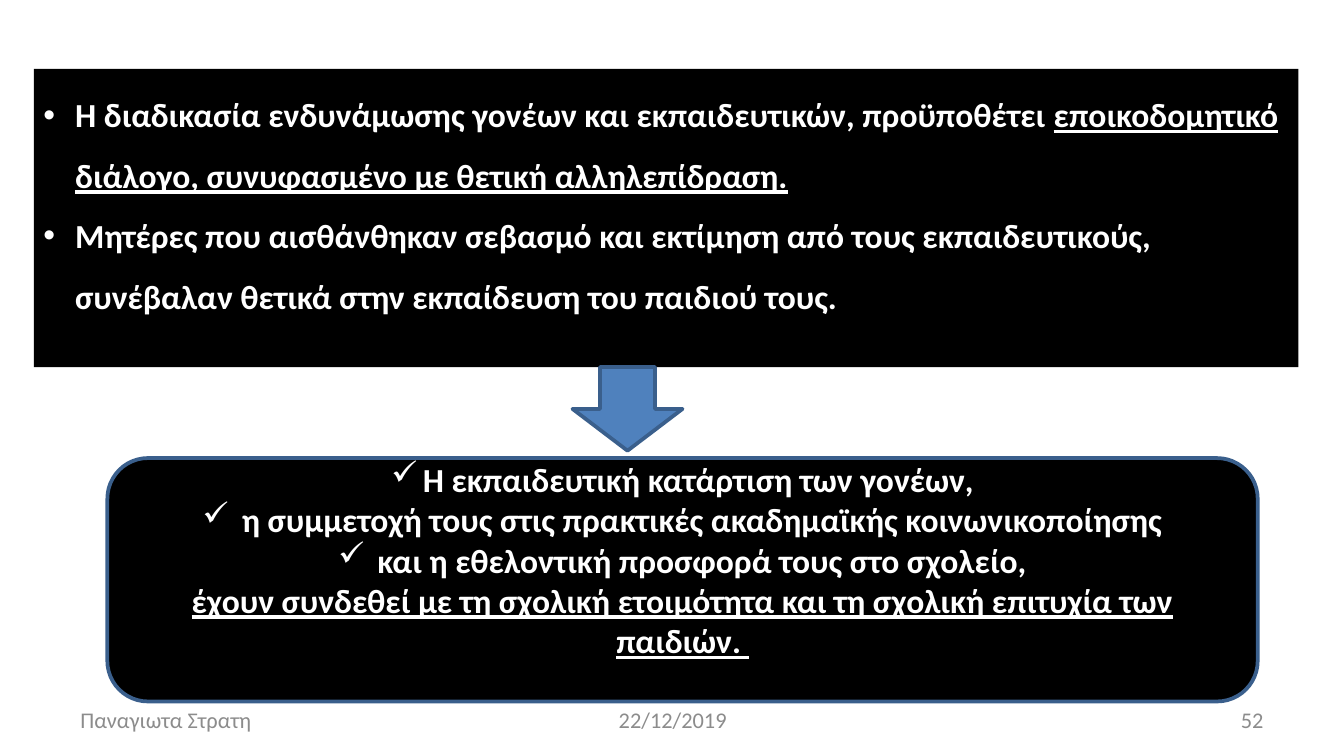
from lxml.etree import SubElement
from pptx import Presentation
from pptx.dml.color import RGBColor
from pptx.enum.shapes import MSO_SHAPE as Kind
from pptx.enum.text import MSO_ANCHOR as Anchor, MSO_AUTO_SIZE as Fit, PP_ALIGN as Align
from pptx.oxml.ns import qn
from pptx.util import Cm, Pt

BLACK = RGBColor(0, 0, 0)
WHITE = RGBColor(255, 255, 255)
GRAY = RGBColor(0x8C, 0x8C, 0x8C)
BLUE = RGBColor(0x4F, 0x81, 0xBD)
EDGE = RGBColor(0x3A, 0x5F, 0x8C)

POINTS = [
    ("•", [("Η διαδικασία ενδυνάμωσης γονέων και εκπαιδευτικών, προϋποθέτει ", False),
           ("εποικοδομητικό διάλογο, συνυφασμένο με θετική αλληλεπίδραση.", True)]),
    ("•", [("Μητέρες που αισθάνθηκαν σεβασμό και εκτίμηση από τους εκπαιδευτικούς, "
            "συνέβαλαν θετικά στην εκπαίδευση του παιδιού τους.", False)]),
]
RESULTS = [
    ("✓", [("Η εκπαιδευτική κατάρτιση των γονέων,", False)]),
    ("✓", [(" η συμμετοχή τους στις πρακτικές ακαδημαϊκής κοινωνικοποίησης", False)]),
    ("✓", [(" και η εθελοντική προσφορά τους στο σχολείο,", False)]),
    (None, [("έχουν συνδεθεί με τη σχολική ετοιμότητα και τη σχολική επιτυχία των παιδιών. ", True)]),
]
FOOTER = [
    ("Παναγιωτα Στρατη", 1.27, 5.92, Align.LEFT),
    ("22/12/2019", 8.69, 8.05, Align.CENTER),
    ("52", 18.21, 5.92, Align.RIGHT),
]


def write(frame, items, size=18, color=WHITE, bold=True, align=Align.LEFT,
          space=1, anchor=Anchor.MIDDLE, sides=0.18, top=0.1, foot=0.1):
    frame.word_wrap = True
    frame.auto_size = Fit.NONE
    frame.vertical_anchor = anchor
    frame.margin_left = frame.margin_right = Cm(sides)
    frame.margin_top, frame.margin_bottom = Cm(top), Cm(foot)
    for i, (mark, parts) in enumerate(items):
        para = frame.add_paragraph() if i else frame.paragraphs[0]
        if mark:
            props = para._p.get_or_add_pPr()
            props.set("marL", str(Cm(0.6)))
            props.set("indent", str(Cm(-0.6)))
            SubElement(props, qn("a:buChar")).set("char", mark)
        para.alignment = align
        para.line_spacing = space
        para.space_before = Pt(0)
        for text, under in parts:
            run = para.add_run()
            run.text = text
            font = run.font
            font.name, font.size, font.bold = "Calibri", Pt(size), bold
            font.underline = under
            font.color.rgb = color


def draw(slide, kind, box, fill):
    shape = slide.shapes.add_shape(kind, *map(Cm, box))
    shape.shadow.inherit = False
    shape.fill.solid()
    shape.fill.fore_color.rgb = fill
    shape.line.color.rgb = EDGE
    shape.line.width = Pt(2)
    return shape


def main():
    deck = Presentation()
    deck.slide_width, deck.slide_height = Cm(25.4), Cm(14.29)
    slide = deck.slides.add_slide(deck.slide_layouts[1])
    title = slide.shapes.title
    title.element.getparent().remove(title.element)

    for text, left, width, align in FOOTER:
        box = slide.shapes.add_textbox(Cm(left), Cm(13.23), Cm(width), Cm(0.76))
        write(box.text_frame, [(None, [(text, False)])], size=12, color=GRAY,
              bold=False, align=align, sides=0.25)

    body = slide.placeholders[1]
    body.left, body.top, body.width, body.height = map(Cm, (0.64, 1.3, 23.9, 5.64))
    body.fill.solid()
    body.fill.fore_color.rgb = BLACK
    write(body.text_frame, POINTS, space=1.5, anchor=Anchor.TOP)

    draw(slide, Kind.DOWN_ARROW, (10.82, 6.94, 2.08, 1.58), BLUE)
    panel = draw(slide, Kind.ROUNDED_RECTANGLE, (2.03, 8.66, 21.74, 4.6), BLACK)
    write(panel.text_frame, RESULTS, align=Align.CENTER, foot=0.86)

    deck.save("out.pptx")


if __name__ == "__main__":
    main()
